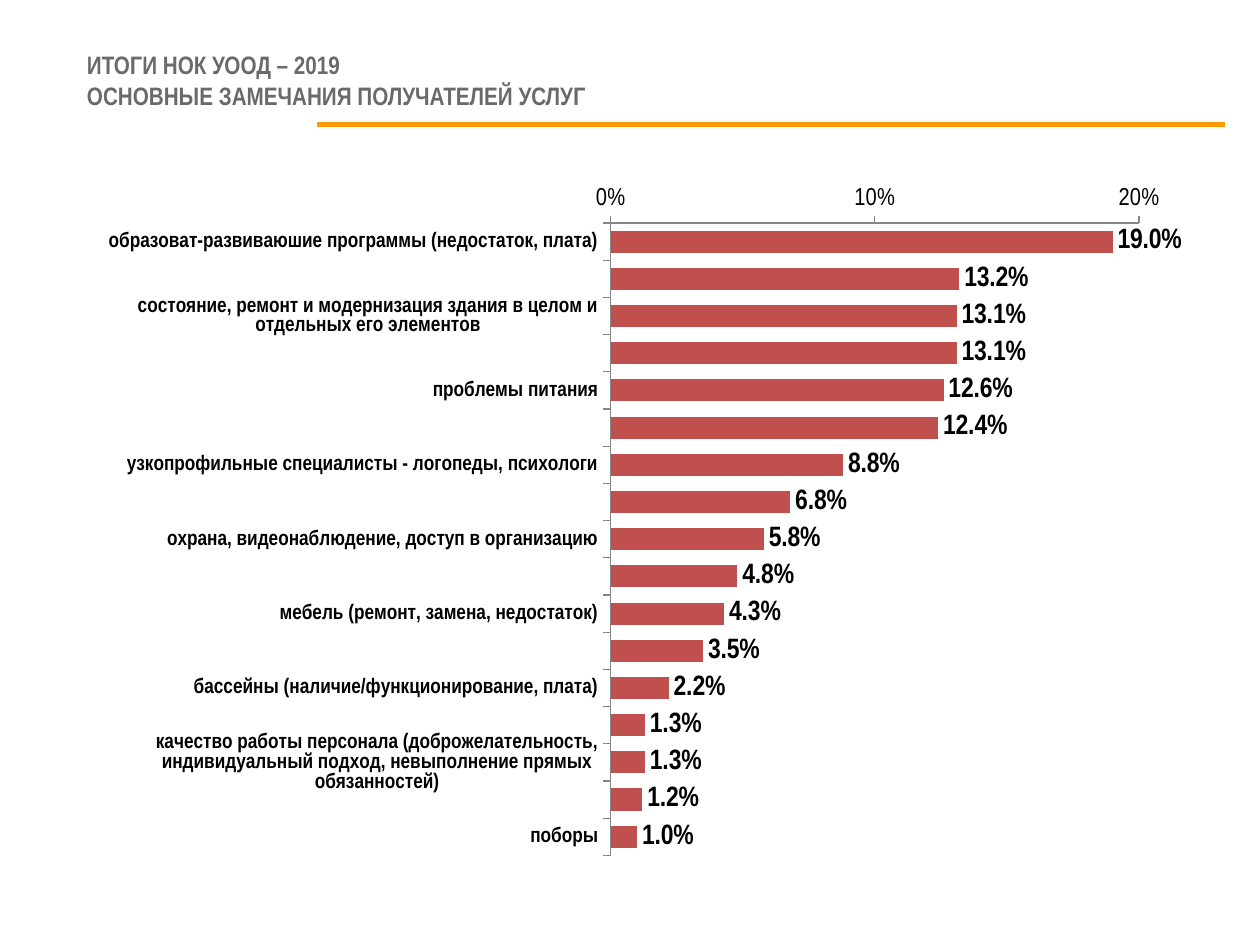
from typing import NamedTuple

from lxml.etree import SubElement
from pptx import Presentation
from pptx.chart.data import CategoryChartData
from pptx.dml.color import RGBColor
from pptx.enum.chart import XL_CHART_TYPE, XL_LABEL_POSITION as LabelPos, XL_TICK_MARK as Tick
from pptx.enum.shapes import MSO_CONNECTOR
from pptx.enum.text import MSO_ANCHOR, MSO_AUTO_SIZE, PP_ALIGN
from pptx.oxml import parse_xml
from pptx.oxml.ns import nsdecls, qn
from pptx.util import Inches, Pt

FONT = "Arial Narrow"
COLORS = {
    "title": "696B6B",
    "rule": "FF9900",
    "bar": "C0504D",
    "text": "000000",
    "axis": "868686",
}


class Complaint(NamedTuple):
    share: float
    topic: str = ""


COMPLAINTS = [
    Complaint(0.19, "образоват-развиваюшие программы (недостаток, плата)"),
    Complaint(0.132),
    Complaint(0.131, "состояние, ремонт и модернизация здания в целом и отдельных его элементов"),
    Complaint(0.131),
    Complaint(0.126, "проблемы питания"),
    Complaint(0.124),
    Complaint(0.088, "узкопрофильные специалисты - логопеды, психологи"),
    Complaint(0.068),
    Complaint(0.058, "охрана, видеонаблюдение, доступ в организацию"),
    Complaint(0.048),
    Complaint(0.043, "мебель (ремонт, замена, недостаток)"),
    Complaint(0.035),
    Complaint(0.022, "бассейны (наличие/функционирование, плата)"),
    Complaint(0.013),
    Complaint(0.013, "качество работы персонала (доброжелательность, индивидуальный подход, "
                     "невыполнение прямых обязанностей)"),
    Complaint(0.012),
    Complaint(0.01, "поборы"),
]


def rgb(name: str) -> RGBColor:
    return RGBColor.from_string(COLORS[name])


def style_font(font, size: float, color: str, bold: bool = False) -> None:
    font.name = FONT
    font.size = Pt(size)
    font.bold = bold
    font.color.rgb = rgb(color)


def set_title(s) -> None:
    sp = s.shapes.title
    sp.left, sp.top, sp.width, sp.height = Inches(0.59), Inches(0.35), Inches(9), Inches(0.57)
    tf = sp.text_frame
    tf.auto_size = MSO_AUTO_SIZE.NONE
    tf.vertical_anchor = MSO_ANCHOR.MIDDLE
    tf.text = "ИТОГИ НОК УООД – 2019\vОСНОВНЫЕ ЗАМЕЧАНИЯ ПОЛУЧАТЕЛЕЙ УСЛУГ"
    p = tf.paragraphs[0]
    p.alignment = PP_ALIGN.LEFT
    for r in p.runs:
        style_font(r.font, 14.4, "title", bold=True)


def add_rule(s) -> None:
    y = Inches(0.99)
    rule = s.shapes.add_connector(MSO_CONNECTOR.STRAIGHT, Inches(2.52), y, Inches(9.72), y)
    rule.line.color.rgb = rgb("rule")
    rule.line.width = Pt(3)
    SubElement(rule.element.spPr, qn("a:effectLst"))


def place_plot(chart, x: float, y: float, w: float, h: float) -> None:
    """Fix the inner plot area, in fractions of the chart."""
    plot_area = chart.element.find(f"{qn('c:chart')}/{qn('c:plotArea')}")
    for old in plot_area.findall(qn("c:layout")):
        plot_area.remove(old)
    sizes = "".join(f'<c:{tag} val="{val}"/>' for tag, val in zip("xywh", (x, y, w, h)))
    plot_area.insert(0, parse_xml(
        f'<c:layout {nsdecls("c")}><c:manualLayout><c:layoutTarget val="inner"/>'
        f'<c:xMode val="edge"/><c:yMode val="edge"/>{sizes}</c:manualLayout></c:layout>'))


def style_axis(axis, size: float, bold: bool) -> None:
    axis.has_major_gridlines = False
    axis.major_tick_mark = Tick.OUTSIDE
    axis.minor_tick_mark = Tick.NONE
    axis.format.line.color.rgb = rgb("axis")
    axis.format.line.width = Pt(0.75)
    style_font(axis.tick_labels.font, size, "text", bold)


def add_complaints_chart(s) -> None:
    data = CategoryChartData(number_format="0.0%")
    data.categories = [c.topic for c in COMPLAINTS]
    data.add_series("Series 1", [c.share for c in COMPLAINTS])
    chart = s.shapes.add_chart(XL_CHART_TYPE.BAR_CLUSTERED, Inches(0.51), Inches(1.39),
                               Inches(8.98), Inches(5.51), data).chart
    chart.has_legend = False
    chart.has_title = False
    style_font(chart.font, 14, "text")
    place_plot(chart, 0.483, 0.069, 0.467, 0.911)

    style_axis(chart.category_axis, 12, bold=True)
    chart.category_axis.reverse_order = True
    shares = chart.value_axis
    style_axis(shares, 14, bold=False)
    shares.minimum_scale, shares.maximum_scale, shares.major_unit = 0, 0.2, 0.1
    shares.tick_labels.number_format = "0%"
    shares.tick_labels.number_format_is_linked = False

    plot = chart.plots[0]
    plot.gap_width = 68
    plot.vary_by_categories = False
    fill = plot.series[0].format.fill
    fill.solid()
    fill.fore_color.rgb = rgb("bar")
    plot.has_data_labels = True
    labels = plot.data_labels
    labels.show_value = True
    labels.number_format = "0.0%"
    labels.number_format_is_linked = False
    labels.position = LabelPos.OUTSIDE_END
    style_font(labels.font, 16, "text", bold=True)


def main() -> None:
    prs = Presentation()
    prs.slide_width, prs.slide_height = Inches(10), Inches(7.5)
    s = prs.slides.add_slide(prs.slide_layouts.get_by_name("Title Only"))
    set_title(s)
    add_rule(s)
    add_complaints_chart(s)
    prs.save("out.pptx")


if __name__ == "__main__":
    main()
